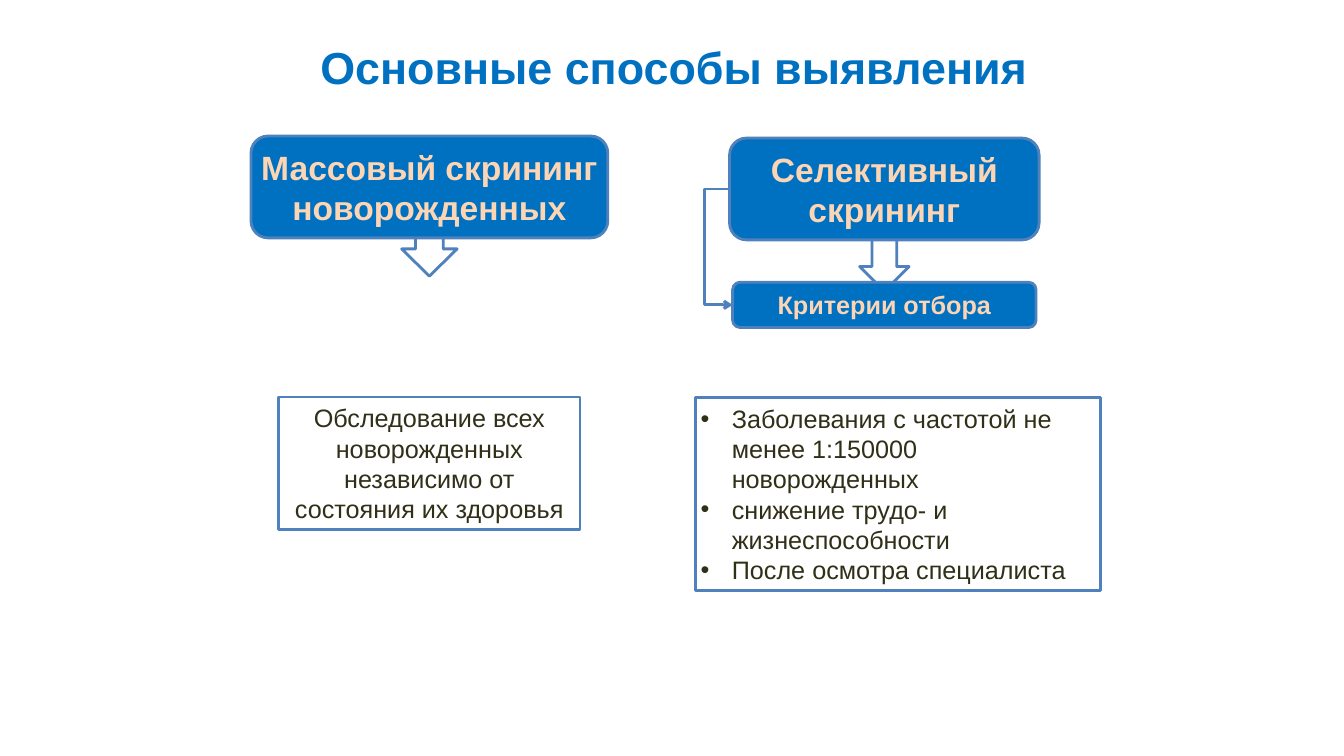
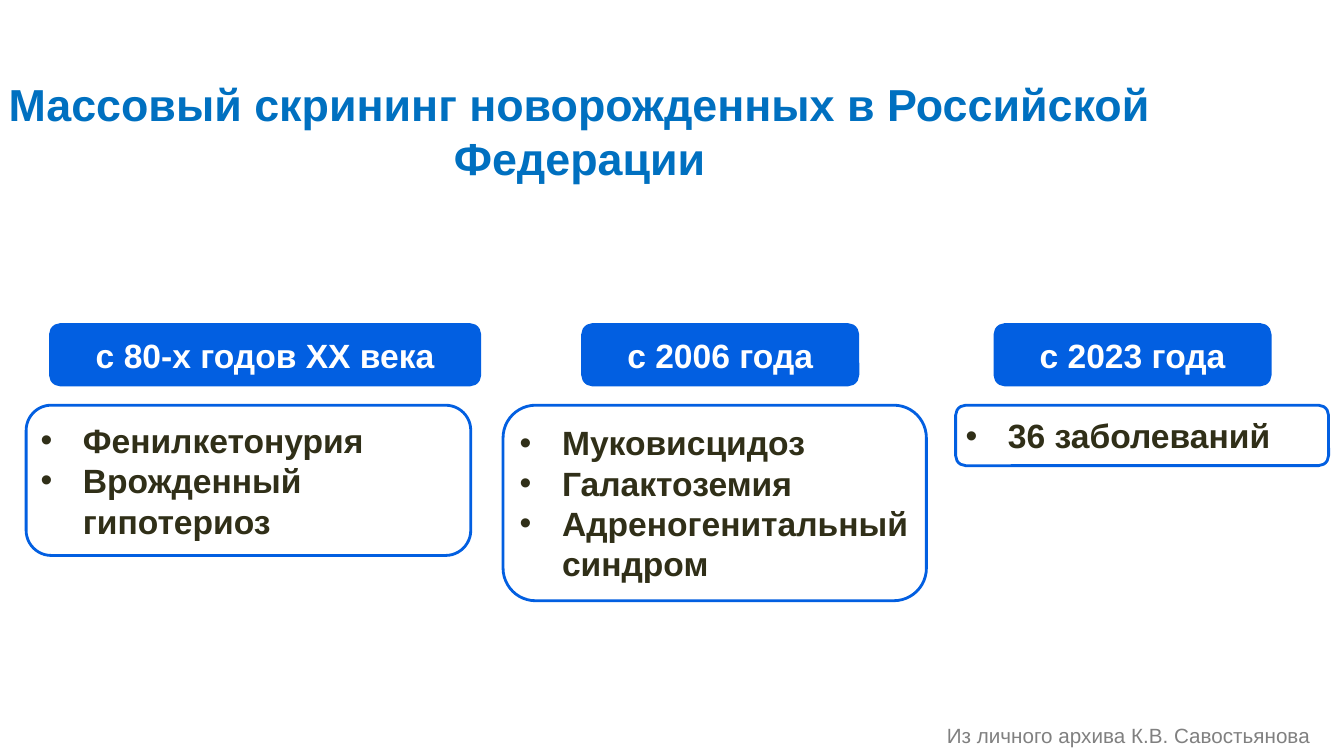
from dataclasses import dataclass

from lxml import etree
from pptx import Presentation
from pptx import util as u
from pptx.dml.color import RGBColor
from pptx.enum import shapes, text
from pptx.oxml.ns import qn


@dataclass(frozen=True)
class Theme:
    font: str = "Arial"
    title: str = "0070C0"
    box: str = "0070C0"
    outline: str = "4F81BD"
    peach: str = "FCD5B5"
    period: str = "025FE1"
    ink: str = "302F18"
    grey: str = "808080"
    white: str = "FFFFFF"
    title_size: float = 32
    head_size: float = 24
    body_size: float = 18
    note_size: float = 14.7
    line_width: float = 2


T = Theme()
SHAPE = shapes.MSO_SHAPE
ALIGN = text.PP_ALIGN


def set_all(obj, values):
    for name, value in values.items():
        setattr(obj, name, value)


class Deck:
    """Places elements by centre, top, width and height in percent of the slide."""

    def __init__(self):
        self.prs = Presentation()
        set_all(self.prs, {"slide_width": u.Inches(13.33), "slide_height": u.Inches(7.5)})
        self.s = None

    def area(self, cx, top, w, h):
        pw, ph = self.prs.slide_width / 100, self.prs.slide_height / 100
        return [int(v) for v in ((cx - w / 2) * pw, top * ph, w * pw, h * ph)]

    def put_text(self, sp, lines, size, color, bold=False, align=ALIGN.CENTER, inset=0.05,
                 indent=0):
        """Fill a shape with paragraphs; a hanging indent makes them bullets."""
        tf = sp.text_frame
        set_all(tf, {"word_wrap": True, "auto_size": text.MSO_AUTO_SIZE.NONE,
                     "vertical_anchor": text.MSO_ANCHOR.MIDDLE})
        set_all(tf, {f"margin_{side}": u.Inches(inset)
                     for side in ("left", "right", "top", "bottom")})
        for i, line in enumerate(lines):
            p = tf.add_paragraph() if i else tf.paragraphs[0]
            p.alignment = align
            if indent:
                pPr = p._p.get_or_add_pPr()
                pPr.set("marL", str(u.Inches(indent)))
                pPr.set("indent", str(-u.Inches(indent)))
                etree.SubElement(pPr, qn("a:buFont")).set("typeface", T.font)
                etree.SubElement(pPr, qn("a:buChar")).set("char", "•")
            r = p.add_run()
            r.text = line
            set_all(r.font, {"name": T.font, "size": u.Pt(size), "bold": bold})
            r.font.color.rgb = RGBColor.from_string(color)

    def slide(self, title, *place):
        self.s = self.prs.slides.add_slide(self.prs.slide_layouts[5])
        sp = self.s.shapes.title
        set_all(sp, dict(zip(("left", "top", "width", "height"), self.area(*place))))
        self.put_text(sp, [title], T.title_size, T.title, bold=True)

    def shape(self, kind, place, fill=T.white, line=T.outline):
        sp = self.s.shapes.add_shape(kind, *self.area(*place))
        sp.shadow.inherit = False
        sp.fill.solid()
        sp.fill.fore_color.rgb = RGBColor.from_string(fill)
        sp.line.color.rgb = RGBColor.from_string(line)
        sp.line.width = u.Pt(T.line_width)
        return sp

    def box(self, kind, place, lines, size, color, fill=T.white, line=T.outline, **style):
        sp = self.shape(kind, place, fill, line)
        self.put_text(sp, lines, size, color, **style)
        return sp

    def side_arrow(self, start, end, reach):
        """Elbow arrow between the left sides of two boxes, bulging out by reach percent."""
        cn = self.s.shapes.add_connector(shapes.MSO_CONNECTOR.ELBOW, start.left, start.top,
                                         end.left, end.top)
        cn.begin_connect(start, 1)
        cn.end_connect(end, 1)
        cn.line.color.rgb = RGBColor.from_string(T.outline)
        cn.line.width = u.Pt(T.line_width)
        bulge = reach / 100 * self.prs.slide_width
        spPr = cn._element.spPr
        guide = etree.SubElement(spPr.find(qn("a:prstGeom")).find(qn("a:avLst")), qn("a:gd"))
        guide.set("name", "adj1")
        guide.set("fmla", f"val {int(-bulge / (end.left - start.left) * 100000)}")
        etree.SubElement(spPr.find(qn("a:ln")), qn("a:tailEnd")).set("type", "arrow")
        etree.SubElement(spPr, qn("a:effectLst"))

    def note(self, line, *place):
        sp = self.s.shapes.add_textbox(*self.area(*place))
        self.put_text(sp, [line], T.note_size, T.grey, align=ALIGN.RIGHT, inset=0.07)


def screening_methods(d):
    d.slide("Основные способы выявления", 50.15, 0.53, 64, 16.67)
    mass, selective = 31.95, 65.8
    label = {"color": T.peach, "fill": T.box, "bold": True}

    # Down arrows lie behind the boxes
    for place in ((mass, 29.33, 4.13, 7.2), (selective, 31.6, 3.68, 6.93)):
        d.shape(SHAPE.DOWN_ARROW, place)

    # Headings and selection criteria
    d.box(SHAPE.ROUNDED_RECTANGLE, (mass, 18, 26.55, 13.47),
          ["Массовый скрининг новорожденных"], T.head_size, **label)
    head = d.box(SHAPE.ROUNDED_RECTANGLE, (selective, 18.27, 23.03, 13.47),
                 ["Селективный скрининг"], T.head_size, **label)
    criteria = d.box(SHAPE.ROUNDED_RECTANGLE, (selective, 37.33, 22.58, 6),
                     ["Критерии отбора"], T.body_size, **label)
    d.side_arrow(head, criteria, 1.88)

    # Explanations
    d.box(SHAPE.RECTANGLE, (mass, 52.53, 22.43, 17.47),
          ["Обследование всех новорожденных независимо от состояния их здоровья"],
          T.body_size, T.ink)
    d.box(SHAPE.RECTANGLE, (66.83, 52.53, 30.15, 25.6),
          ["Заболевания с частотой не менее 1:150000 новорожденных",
           "снижение трудо- и жизнеспособности", "После осмотра специалиста"],
          T.body_size, T.ink, align=ALIGN.LEFT, indent=0.31)


def screening_in_russia(d):
    d.slide("Массовый скрининг новорожденных в Российской Федерации", 43.13, 7.6, 86.25, 19.33)

    # Period, its centre and width; diseases, their centre, width and height
    periods = [
        ("с 80-х годов XX века", 19.73, 31.95,
         ["Фенилкетонурия", "Врожденный гипотериоз"], 18.49, 33.08, 19.87),
        ("с 2006 года", 53.59, 20.48,
         ["Муковисцидоз", "Галактоземия", "Адреногенитальный синдром"], 53.18, 31.5, 25.87),
        ("с 2023 года", 84.27, 20.48, ["36 заболеваний"], 84.98, 27.75, 8),
    ]
    style = {"size": T.head_size, "line": T.period, "bold": True, "inset": 0.07}
    for period, cx, w, diseases, list_cx, list_w, list_h in periods:
        d.box(SHAPE.ROUNDED_RECTANGLE, (cx, 42.93, w, 8), [period],
              color=T.white, fill=T.period, **style)
        d.box(SHAPE.ROUNDED_RECTANGLE, (list_cx, 53.6, list_w, list_h), diseases,
              color=T.ink, align=ALIGN.LEFT, indent=0.42, **style)

    # Source of the material
    d.note("Из личного архива К.В. Савостьянова", 50.5, 94.67, 95, 5.07)


def main():
    d = Deck()
    screening_methods(d)
    screening_in_russia(d)
    d.prs.save("out.pptx")


if __name__ == "__main__":
    main()
